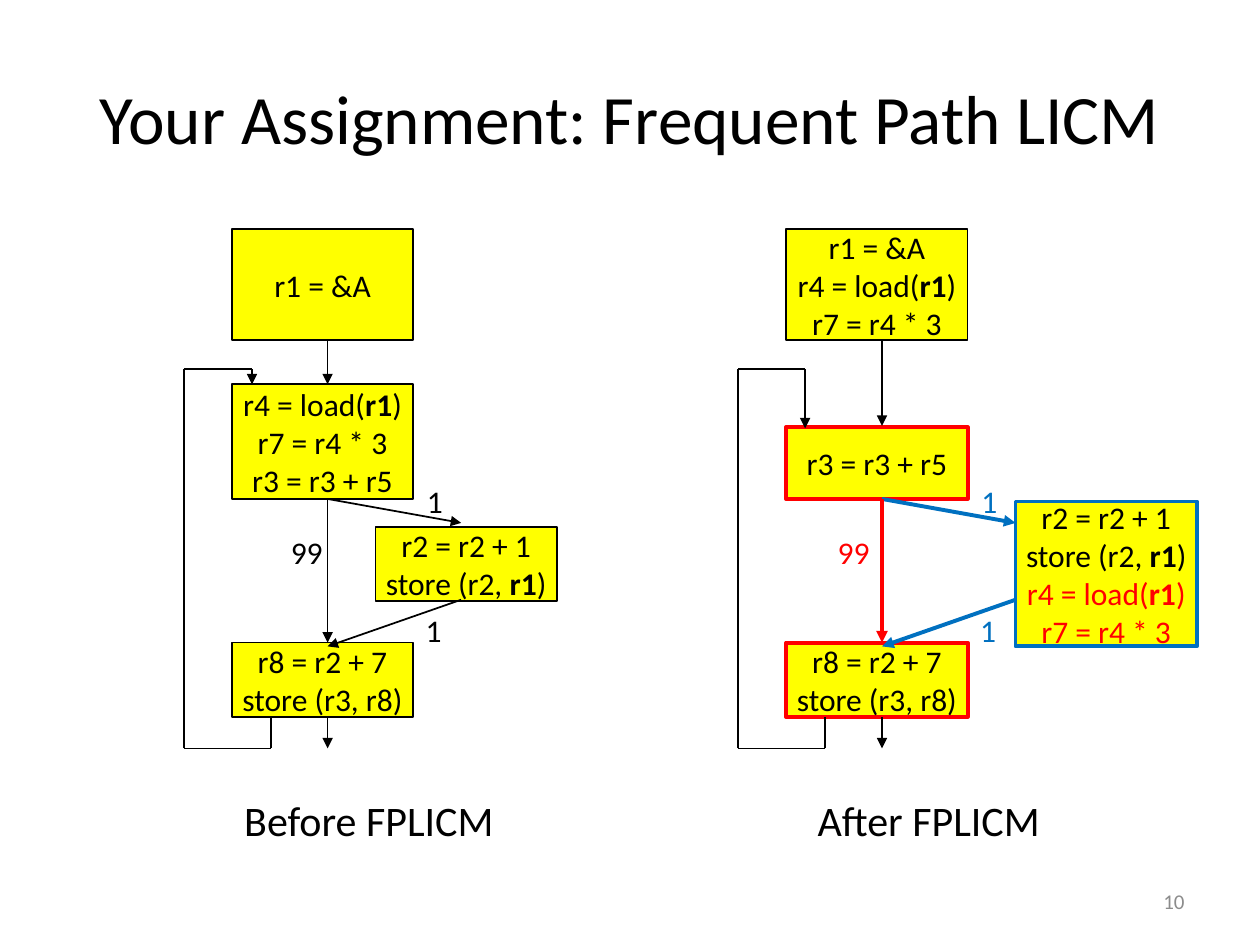
import itertools
from dataclasses import dataclass

import pptx
import pptx.dml.color
import pptx.enum.shapes
import pptx.enum.text
import pptx.oxml
import pptx.oxml.ns
import pptx.util

PX = 9144
ALIGN = pptx.enum.text.PP_ALIGN
MIDDLE = pptx.enum.text.MSO_ANCHOR.MIDDLE
TOP = pptx.enum.text.MSO_ANCHOR.TOP


@dataclass(frozen=True)
class Theme:
    font: str = "Calibri"
    ink: str = "000000"
    block: str = "FFFF00"
    frequent: str = "FF0000"
    rare: str = "0070C0"
    muted: str = "8C8C8C"
    title: float = 39.6
    caption: int = 24
    code: int = 18
    number: int = 12
    thin: float = 1
    thick: float = 2.25


THEME = Theme()
INK, FREQUENT, RARE = THEME.ink, THEME.frequent, THEME.rare

TITLE = ("Your Assignment: Frequent Path LICM", (50, 30, 900, 125))
SLIDE_NUMBER = ("10", (717, 695, 233, 40))

BLOCK_LEFT, BLOCK_WIDTH = 184, 144
AXIS = 260
HOISTED = ["r4 = load(|r1|)", "r7 = r4 * 3"]
SIDE = ["r2 = r2 + 1", "store (r2, |r1|)"]
LAST = ["r8 = r2 + 7", "store (r3, r8)"]

# Each block: left, top, height, outline, lines, lines in the frequent colour
DIAGRAMS = [
    {
        "shift": 0,
        "blocks": [
            (BLOCK_LEFT, 182, 88, INK, ["r1 = &A"], []),
            (BLOCK_LEFT, 305, 91, INK, HOISTED + ["r3 = r3 + r5"], []),
            (298, 418, 59, INK, SIDE, []),
            (BLOCK_LEFT, 510, 59, INK, LAST, []),
        ],
        "header_top": 305,
        "side_x": 366,
        "loop_end": (200, 305),
        "frequent": INK,
        "rare": INK,
        "count_left": 221,
        "caption": ("Before FPLICM", (184, 626, 220, 50)),
    },
    {
        "shift": 440,
        "blocks": [
            (BLOCK_LEFT, 182, 88, INK, ["r1 = &A"] + HOISTED, []),
            (BLOCK_LEFT, 339, 57, FREQUENT, ["r3 = r3 + r5"], []),
            (366, 398, 115, RARE, SIDE, HOISTED),
            (BLOCK_LEFT, 510, 59, FREQUENT, LAST, []),
        ],
        "header_top": 338,
        "side_x": 366,
        "loop_end": (199, 340),
        "frequent": FREQUENT,
        "rare": RARE,
        "count_left": 215,
        "caption": ("After FPLICM", (199, 626, 199, 50)),
    },
]


def rgb(value):
    return pptx.dml.color.RGBColor.from_string(value)


def emu(lengths):
    return [length * PX for length in lengths]


def line_weight(colour):
    return pptx.util.Pt(THEME.thin if colour == INK else THEME.thick)


def write(paragraph, text, size, colour, align):
    paragraph.alignment = align
    paragraph.font.name = THEME.font
    paragraph.font.size = pptx.util.Pt(size)
    paragraph.font.color.rgb = rgb(colour)
    for index, part in enumerate(text.split("|")):
        run = paragraph.add_run()
        run.text = part
        if index % 2:
            run.font.bold = True


def add_label(slide, text, box, size, colour=INK, align=ALIGN.LEFT, anchor=TOP, wrap=False):
    frame = slide.shapes.add_textbox(*emu(box)).text_frame
    frame.word_wrap = wrap
    frame.vertical_anchor = anchor
    write(frame.paragraphs[0], text, size, colour, align)


def add_block(slide, box, outline, lines, added):
    block = slide.shapes.add_shape(pptx.enum.shapes.MSO_SHAPE.RECTANGLE, *emu(box))
    block.shadow.inherit = False
    block.fill.solid()
    block.fill.fore_color.rgb = rgb(THEME.block)
    block.line.color.rgb = rgb(outline)
    block.line.width = line_weight(outline)
    frame = block.text_frame
    frame.word_wrap = False
    frame.vertical_anchor = MIDDLE
    frame.margin_left = frame.margin_right = 9 * PX
    frame.margin_top = frame.margin_bottom = 4 * PX
    coloured = [(text, INK) for text in lines] + [(text, FREQUENT) for text in added]
    for index, (text, colour) in enumerate(coloured):
        paragraph = frame.add_paragraph() if index else frame.paragraphs[0]
        write(paragraph, text, THEME.code, colour, ALIGN.CENTER)


def add_edge(slide, start, end, colour=INK, arrow=True):
    edge = slide.shapes.add_connector(
        pptx.enum.shapes.MSO_CONNECTOR.STRAIGHT, *emu(start + end)
    )
    edge.line.color.rgb = rgb(colour)
    edge.line.width = line_weight(colour)
    if arrow:
        tail = pptx.oxml.parse_xml(
            f'<a:tailEnd {pptx.oxml.ns.nsdecls("a")} type="triangle"/>'
        )
        edge.line._get_or_add_ln().append(tail)
    edge._element.spPr.append(
        pptx.oxml.parse_xml(f'<a:effectLst {pptx.oxml.ns.nsdecls("a")}/>')
    )


def add_diagram(slide, diagram):
    shift = diagram["shift"]
    frequent, rare = diagram["frequent"], diagram["rare"]

    def moved(left, *rest):
        return (left + shift, *rest)

    for left, top, height, outline, lines, added in diagram["blocks"]:
        add_block(slide, moved(left, top, BLOCK_WIDTH, height), outline, lines, added)

    side_x = diagram["side_x"]
    for start, end, colour in [
        ((AXIS, 270), (AXIS, diagram["header_top"]), INK),
        ((AXIS, 396), (side_x, 415), rare),
        ((side_x, 476), (AXIS, 513), rare),
        ((AXIS, 569), (AXIS, 594), INK),
        ((AXIS, 396), (AXIS, 510), frequent),
    ]:
        add_edge(slide, moved(*start), moved(*end), colour)

    loop_end = diagram["loop_end"]
    loop = [(215, 569), (215, 594), (146, 594), (146, 293), (loop_end[0], 293), loop_end]
    for start, end in itertools.pairwise(loop):
        add_edge(slide, moved(*start), moved(*end), arrow=end == loop_end)

    for text, box, colour in [
        ("1", (329, 378, 33, 40), rare),
        ("1", (328, 480, 33, 40), rare),
        ("99", (diagram["count_left"], 418, 46, 40), frequent),
    ]:
        add_label(slide, text, moved(*box), THEME.code, colour)
    caption, box = diagram["caption"]
    add_label(slide, caption, moved(*box), THEME.caption)


def main():
    deck = pptx.Presentation()
    deck.slide_width, deck.slide_height = emu((1000, 750))
    slide = deck.slides.add_slide(deck.slide_layouts[6])
    add_label(slide, *TITLE, THEME.title, align=ALIGN.CENTER, anchor=MIDDLE, wrap=True)
    for diagram in DIAGRAMS:
        add_diagram(slide, diagram)
    add_label(slide, *SLIDE_NUMBER, THEME.number, THEME.muted, ALIGN.RIGHT, MIDDLE, True)
    deck.save("out.pptx")


if __name__ == "__main__":
    main()
